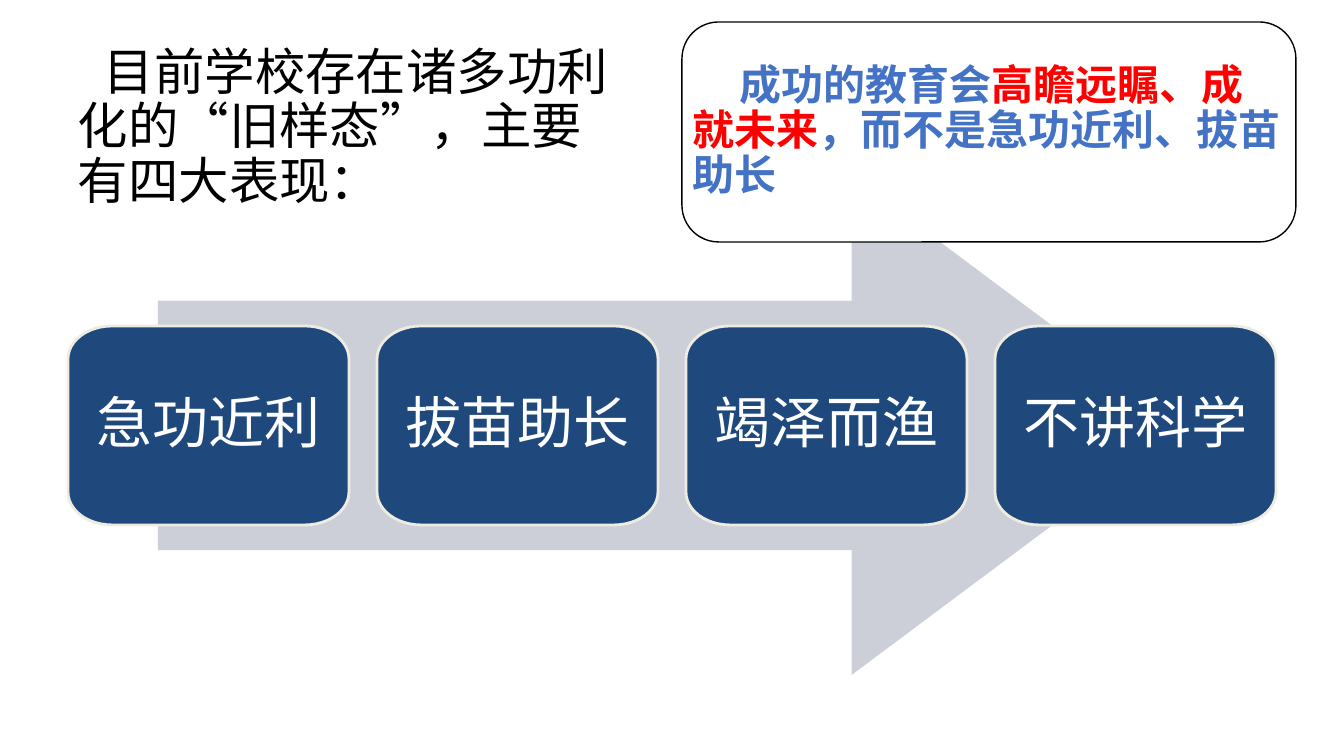
from math import cos, pi, sin

from pptx import Presentation
from pptx.dml.color import RGBColor
from pptx.enum.shapes import MSO_SHAPE as Shape
from pptx.enum.text import MSO_ANCHOR as Anchor, PP_ALIGN as Align
from pptx.util import Emu, Pt

WIDTH, HEIGHT = 1344, 756
EMU_PER_PX = 12192000 / WIDTH
COLORS = {
    "black": "000000", "white": "FFFFFF", "red": "FF0000", "blue": "4472C4",
    "navy": "1F497D", "cream": "EEECE1", "arrow": "CCCFD7",
}
SYMPTOMS = ["急功近利", "拔苗助长", "竭泽而渔", "不讲科学"]


def px(length):
    return Emu(round(length * EMU_PER_PX))


def rgb(name):
    return RGBColor.from_string(COLORS[name])


class SlideBuilder:
    def __init__(self, slide):
        self.slide = slide

    def paint(self, shape, fill, line=None, line_width=1):
        shape.shadow.inherit = False
        shape.fill.solid()
        shape.fill.fore_color.rgb = rgb(fill)
        if line:
            shape.line.color.rgb = rgb(line)
            shape.line.width = Pt(line_width)
        else:
            shape.line.fill.background()

    def add_text(self, shape, runs, font, size, margin, bold=False,
                 align=Align.LEFT, indent=0):
        """Fill a shape with one paragraph of (text, colour) runs."""
        frame = shape.text_frame
        frame.word_wrap = True
        frame.vertical_anchor = Anchor.MIDDLE
        frame.margin_left = frame.margin_right = px(margin)
        paragraph = frame.paragraphs[0]
        paragraph.alignment = align
        paragraph.line_spacing = 0.9
        paragraph.font.name = font
        paragraph.font.size = Pt(size)
        paragraph.font.bold = bold
        if indent:
            paragraph._p.get_or_add_pPr().set("indent", str(px(indent)))
        for text, color in runs:
            run = paragraph.add_run()
            run.text = text
            run.font.color.rgb = rgb(color)

    def text_box(self, x, y, width, height):
        return self.slide.shapes.add_textbox(px(x), px(y), px(width), px(height))

    def preset(self, kind, x, y, width, height, **style):
        shape = self.slide.shapes.add_shape(
            kind, px(x), px(y), px(width), px(height))
        self.paint(shape, **style)
        return shape

    def oval_cornered_box(self, x, y, width, height, radius_x, radius_y, **style):
        """Draw a box whose corners are quarter ellipses, clockwise from top left."""
        left, right = x + radius_x, x + width - radius_x
        top, bottom = y + radius_y, y + height - radius_y
        corners = [(left, top), (right, top), (right, bottom), (left, bottom)]
        steps = 12
        points = []
        for corner, (center_x, center_y) in enumerate(corners):
            for step in range(steps + 1):
                angle = pi + (corner + step / steps) * pi / 2
                points.append((px(center_x + radius_x * cos(angle)),
                               px(center_y + radius_y * sin(angle))))
        builder = self.slide.shapes.build_freeform(*points[0])
        builder.add_line_segments(points[1:], close=True)
        shape = builder.convert_to_shape()
        self.paint(shape, **style)
        return shape


def main():
    presentation = Presentation()
    presentation.slide_width, presentation.slide_height = px(WIDTH), px(HEIGHT)
    builder = SlideBuilder(
        presentation.slides.add_slide(presentation.slide_layouts[6]))

    title = builder.text_box(68, 30, 552, 197)
    builder.add_text(
        title, [("目前学校存在诸多功利化的“旧样态”，主要有四大表现：", "black")],
        "Arial", 36, margin=10, indent=26)

    arrow = builder.preset(Shape.RIGHT_ARROW, 158, 176, 1028, 499, fill="arrow")
    arrow.adjustments[0] = 0.5
    arrow.adjustments[1] = 0.67

    box_width, gap = 281, 28
    for index, symptom in enumerate(SYMPTOMS):
        box = builder.oval_cornered_box(
            68 + index * (box_width + gap), 326, box_width, 199, 44, 33,
            fill="navy", line="cream", line_width=2)
        builder.add_text(box, [(symptom, "white")], "Calibri", 40,
                         margin=20, align=Align.CENTER)

    callout = builder.preset(Shape.ROUNDED_RECTANGLE, 682, 22, 614, 220,
                             fill="white", line="black")
    builder.add_text(callout, [
        ("成功的教育会", "blue"),
        ("高瞻远瞩、成就未来", "red"),
        ("，而不是急功近利、拔苗助长", "blue"),
    ], "Calibri", 30, margin=0, bold=True, indent=47)

    presentation.save("out.pptx")


if __name__ == "__main__":
    main()
